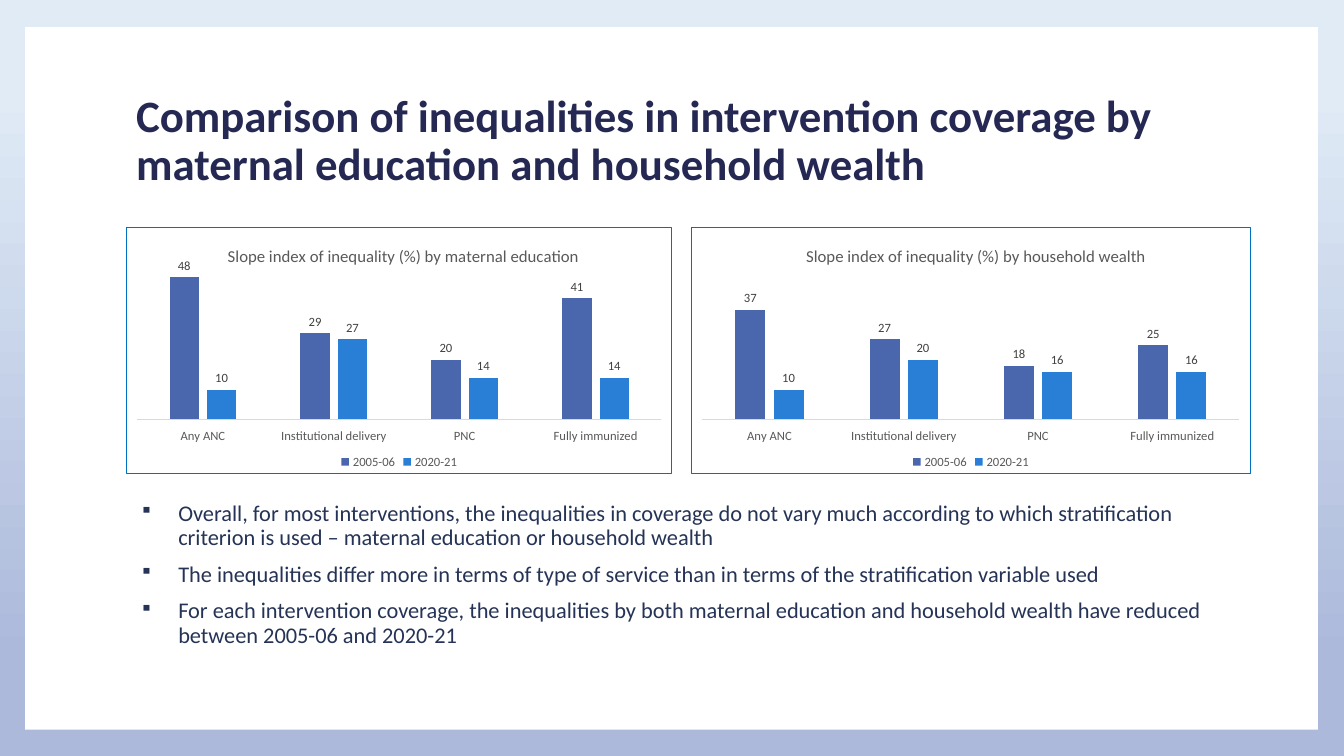
from lxml.etree import SubElement
from pptx import Presentation
from pptx.chart.data import CategoryChartData
from pptx.dml.color import RGBColor
from pptx.enum.chart import XL_CHART_TYPE, XL_LABEL_POSITION, XL_LEGEND_POSITION, XL_TICK_LABEL_POSITION, XL_TICK_MARK
from pptx.enum.shapes import MSO_SHAPE
from pptx.enum.text import MSO_ANCHOR, MSO_AUTO_SIZE, PP_ALIGN
from pptx.oxml import parse_xml
from pptx.oxml.ns import nsdecls, qn
from pptx.util import Inches, Pt

TITLE = "Comparison of inequalities in intervention coverage by maternal education and household wealth"
BULLETS = [
    "Overall, for most interventions, the inequalities in coverage do not vary much according to which stratification criterion is used – maternal education or household wealth",
    "The inequalities differ more in terms of type of service than in terms of the stratification variable used",
    "For each intervention coverage, the inequalities by both maternal education and household wealth have reduced between 2005-06 and 2020-21",
]
INTERVENTIONS = ["Any ANC", "Institutional delivery", "PNC", "Fully immunized"]
SERIES_COLORS = {"2005-06": "4A66AC", "2020-21": "297FD5"}
CHARTS = [
    {"title": "Slope index of inequality (%) by maternal education", "left": 1.25, "width": 5.42,
     "title_left": 0.18, "values": [(48, 29, 20, 41), (10, 27, 14, 14)]},
    {"title": "Slope index of inequality (%) by household wealth", "left": 6.85, "width": 5.56,
     "title_left": 0.2, "values": [(37, 27, 18, 25), (10, 20, 16, 16)]},
]
FONT = "Calibri"
BACKGROUND_STOPS = [(0.12, "E0EBF6"), (0.87, "ACB9DB")]


def color(value):
    return RGBColor.from_string(value)


def style_font(font, size, value, bold=False):
    font.name = FONT
    font.size = Pt(size)
    font.bold = bold
    font.color.rgb = color(value)


def place(shape, left, top, width, height):
    shape.left, shape.top = Inches(left), Inches(top)
    shape.width, shape.height = Inches(width), Inches(height)


def set_layout(parent, inner=False, **fractions):
    layout = parent.find(qn("c:layout"))
    if layout is None:
        layout = parse_xml(f"<c:layout {nsdecls('c')}/>")
        parent.insert(0, layout)
    manual = SubElement(layout, qn("c:manualLayout"))
    if inner:
        SubElement(manual, qn("c:layoutTarget")).set("val", "inner")
    for mode in ("xMode", "yMode"):
        SubElement(manual, qn(f"c:{mode}")).set("val", "edge")
    for name, fraction in fractions.items():
        SubElement(manual, qn(f"c:{name}")).set("val", str(fraction))


def add_background(page):
    fill = page.background.fill
    fill.gradient()
    fill.gradient_angle = 270
    for stop, (position, value) in zip(fill.gradient_stops, BACKGROUND_STOPS):
        stop.position = position
        stop.color.rgb = color(value)
    panel = page.shapes.add_shape(MSO_SHAPE.RECTANGLE, Inches(0.25), Inches(0.27), Inches(12.82), Inches(6.97))
    panel.shadow.inherit = False
    panel.fill.solid()
    panel.fill.fore_color.rgb = color("FFFFFF")
    panel.line.fill.background()
    page.shapes.title._element.addprevious(panel._element)


def add_title(page):
    title = page.shapes.title
    place(title, 1.25, 0.67, 10.8, 1.48)
    frame = title.text_frame
    frame.text = TITLE
    frame.auto_size = MSO_AUTO_SIZE.NONE
    frame.vertical_anchor = MSO_ANCHOR.MIDDLE
    para = frame.paragraphs[0]
    para.alignment = PP_ALIGN.LEFT
    para.line_spacing = 0.9
    style_font(para.font, 32, "242852", True)


def add_bullets(page):
    box = page.shapes.add_textbox(Inches(1.25), Inches(4.93), Inches(10.8), Inches(1.73))
    frame = box.text_frame
    frame.word_wrap = True
    frame.text = "\n".join(BULLETS)
    for para in frame.paragraphs:
        para.line_spacing = 0.9
        para.space_before, para.space_after = Pt(3), Pt(6)
        style_font(para.font, 16, "253356")
        properties = para._p.get_or_add_pPr()
        properties.set("marL", str(Inches(0.42)))
        properties.set("indent", str(Inches(-0.38)))
        bullet = (f"<a:buClr {nsdecls('a')}><a:srgbClr val='253356'/></a:buClr>",
                  f"<a:buSzPct {nsdecls('a')} val='80000'/>",
                  f"<a:buChar {nsdecls('a')} char='▪'/>")
        for part in bullet:
            properties.find(qn("a:defRPr")).addprevious(parse_xml(part))


def add_chart(page, content):
    data = CategoryChartData(number_format="#,##0")
    data.categories = INTERVENTIONS
    for name, values in zip(SERIES_COLORS, content["values"]):
        data.add_series(name, values)
    chart = page.shapes.add_chart(XL_CHART_TYPE.COLUMN_CLUSTERED, Inches(content["left"]), Inches(2.25),
                                  Inches(content["width"]), Inches(2.45), data).chart
    style_font(chart.font, 10, "000000")

    chart.has_title = True
    chart.chart_title.text_frame.text = content["title"]
    style_font(chart.chart_title.text_frame.paragraphs[0].font, 12, "595959")
    set_layout(chart.chart_title._element, x=content["title_left"], y=0.06)
    set_layout(chart._chartSpace.chart.plotArea, inner=True, x=0.02, y=0.18, w=0.96, h=0.6)

    chart.has_legend = True
    chart.legend.position = XL_LEGEND_POSITION.BOTTOM
    chart.legend.include_in_layout = False
    style_font(chart.legend.font, 9, "595959")

    axis = chart.category_axis
    axis.major_tick_mark = axis.minor_tick_mark = XL_TICK_MARK.NONE
    axis.tick_label_position = XL_TICK_LABEL_POSITION.LOW
    axis.format.line.color.rgb = color("D9D9D9")
    axis.format.line.width = Pt(0.75)
    style_font(axis.tick_labels.font, 9, "595959")
    scale = chart.value_axis
    scale.minimum_scale, scale.maximum_scale = 0, 50
    scale.has_major_gridlines = False
    scale.visible = False

    plot = chart.plots[0]
    plot.gap_width, plot.overlap = 219, -27
    plot.vary_by_categories = False
    for series, value in zip(plot.series, SERIES_COLORS.values()):
        series.format.fill.solid()
        series.format.fill.fore_color.rgb = color(value)
        labels = series.data_labels
        labels.show_value = True
        labels.position = XL_LABEL_POSITION.OUTSIDE_END
        labels.number_format = "#,##0"
        labels.number_format_is_linked = False
        style_font(labels.font, 9, "404040")

    chart._chartSpace.chart.addnext(parse_xml(
        f"<c:spPr {nsdecls('c', 'a')}><a:solidFill><a:srgbClr val='FFFFFF'/></a:solidFill>"
        f"<a:ln w='{Pt(0.75)}'><a:solidFill><a:srgbClr val='0070C0'/></a:solidFill></a:ln></c:spPr>"))


def main():
    deck = Presentation()
    deck.slide_width, deck.slide_height = Inches(13.33), Inches(7.5)
    page = deck.slides.add_slide(deck.slide_layouts[5])
    add_background(page)
    add_title(page)
    add_bullets(page)
    for content in CHARTS:
        add_chart(page, content)
    deck.save("out.pptx")


if __name__ == "__main__":
    main()
